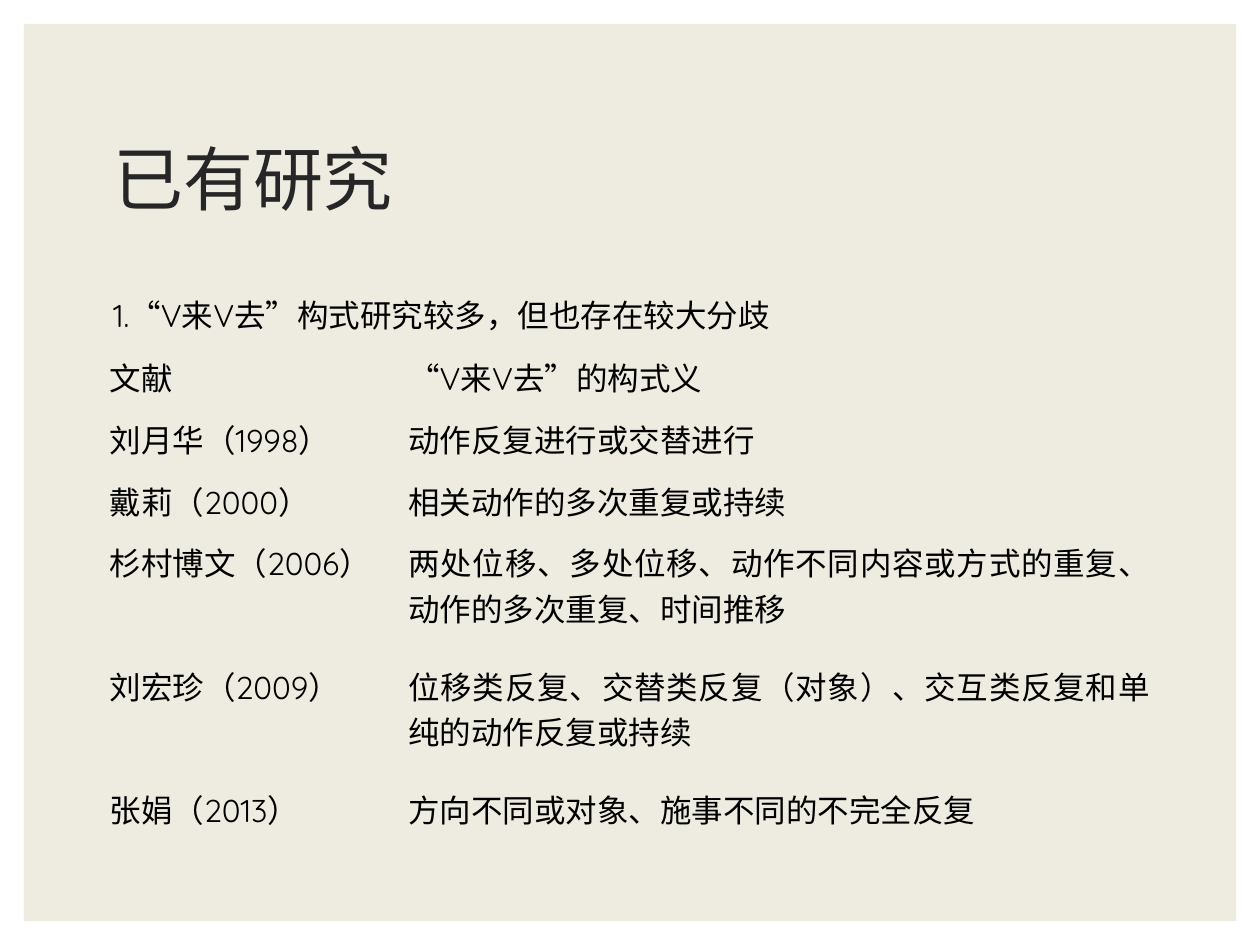
from pptx import Presentation
from pptx import util as u
from pptx.dml.color import RGBColor
from pptx.enum import lang, shapes, text

COLORS = {"panel": "EEECE1", "title": "262626", "body": "000000"}
FONT = "Quicksand"
LEFT, WIDTH = u.Inches(0.8), u.Inches(8.4)

prs = Presentation()
prs.slide_width, prs.slide_height = u.Inches(10), u.Inches(7.5)
slide = prs.slides.add_slide(prs.slide_layouts[6])


def write(frame, words, size, color):
    frame.word_wrap = True
    paragraph = frame.paragraphs[0]
    run = paragraph.add_run()
    run.text = words
    run.font.language_id = lang.MSO_LANGUAGE_ID.SIMPLIFIED_CHINESE
    paragraph.font.name = FONT
    paragraph.font.size = u.Pt(size)
    paragraph.font.color.rgb = RGBColor.from_string(COLORS[color])
    return paragraph


# Background panel
panel = slide.shapes.add_shape(
    shapes.MSO_SHAPE.RECTANGLE,
    u.Inches(0.19), u.Inches(0.19), u.Inches(9.62), u.Inches(7.12))
panel.shadow.inherit = False
panel.fill.solid()
panel.fill.fore_color.rgb = RGBColor.from_string(COLORS["panel"])
panel.line.fill.background()

# Title
title = slide.shapes.add_textbox(LEFT, u.Inches(0.7), WIDTH, u.Inches(1.5))
title.text_frame.vertical_anchor = text.MSO_ANCHOR.MIDDLE
write(title.text_frame, "已有研究", 40, "title").line_spacing = 0.9

# Lead sentence
lead = slide.shapes.add_textbox(LEFT, u.Inches(2.3), WIDTH, u.Inches(4.3))
write(lead.text_frame, "1.“V来V去”构式研究较多，但也存在较大分歧", 18, "body")

# Literature table: source, meaning, lines of text
studies = [
    ("文献", "“V来V去”的构式义", 1),
    ("刘月华（1998）", "动作反复进行或交替进行", 1),
    ("戴莉（2000）", "相关动作的多次重复或持续", 1),
    ("杉村博文（2006）",
     "两处位移、多处位移、动作不同内容或方式的重复、动作的多次重复、时间推移", 2),
    ("刘宏珍（2009）",
     "位移类反复、交替类反复（对象）、交互类反复和单纯的动作反复或持续", 2),
    ("张娟（2013）", "方向不同或对象、施事不同的不完全反复", 1),
]
literature = slide.shapes.add_table(
    len(studies), 2, LEFT, u.Inches(2.81), WIDTH, u.Inches(3.92)).table
literature.first_row = literature.horz_banding = False
# "No Style, No Grid" removes the default borders
literature._tbl.tblPr[0].text = "{2D5ABB26-0587-4C30-8999-92F81FD0307C}"
for column, width in zip(literature.columns, (2.37, 6.03)):
    column.width = u.Inches(width)

for row, (source, meaning, lines) in zip(literature.rows, studies):
    row.height = u.Inches(0.49 * lines)
    for cell, words in zip(row.cells, (source, meaning)):
        cell.fill.background()
        cell.margin_left = cell.margin_right = u.Inches(0.07)
        cell.margin_top = cell.margin_bottom = 0
        paragraph = write(cell.text_frame, words, 18, "body")
        paragraph.alignment = text.PP_ALIGN.JUSTIFY

prs.save("out.pptx")
